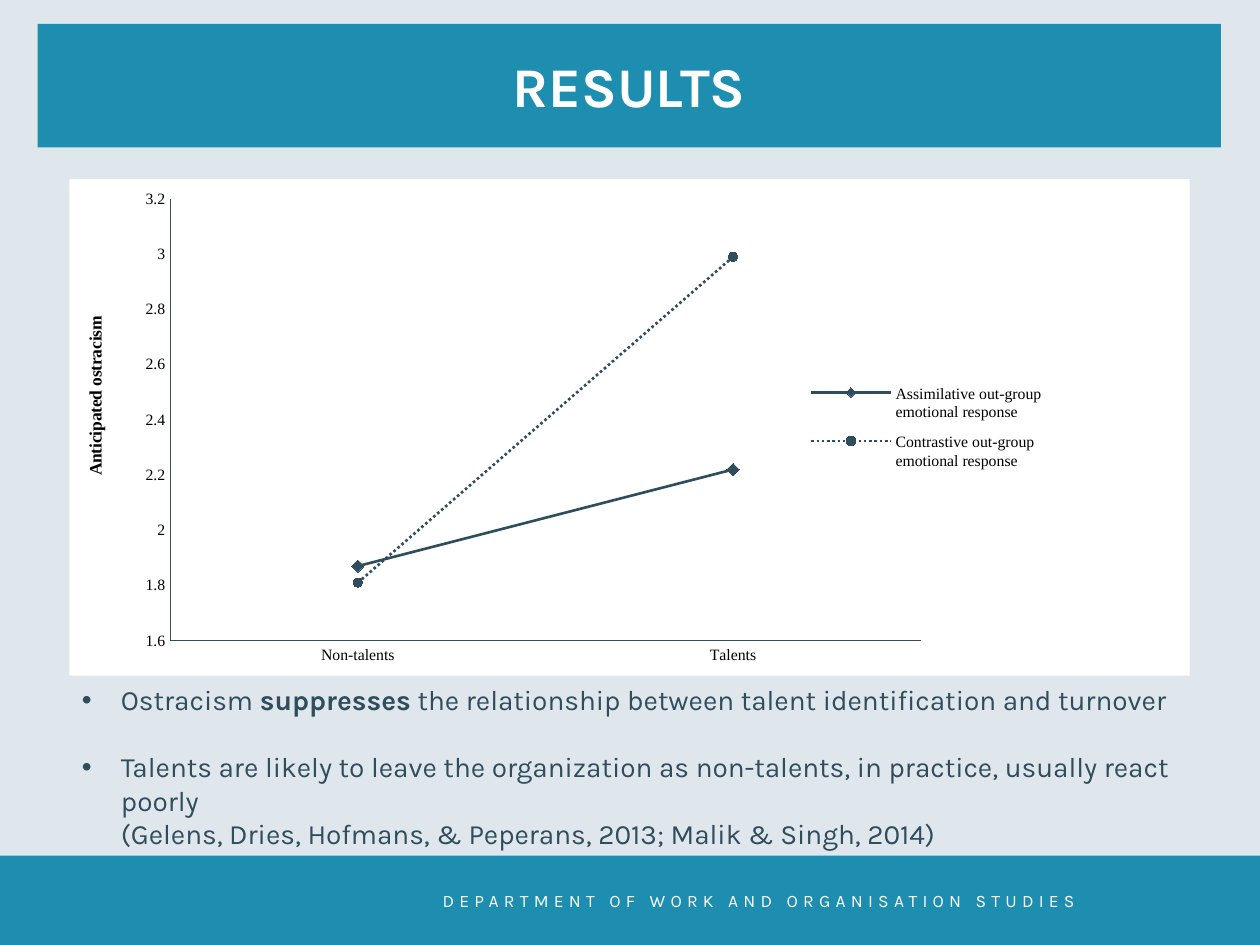
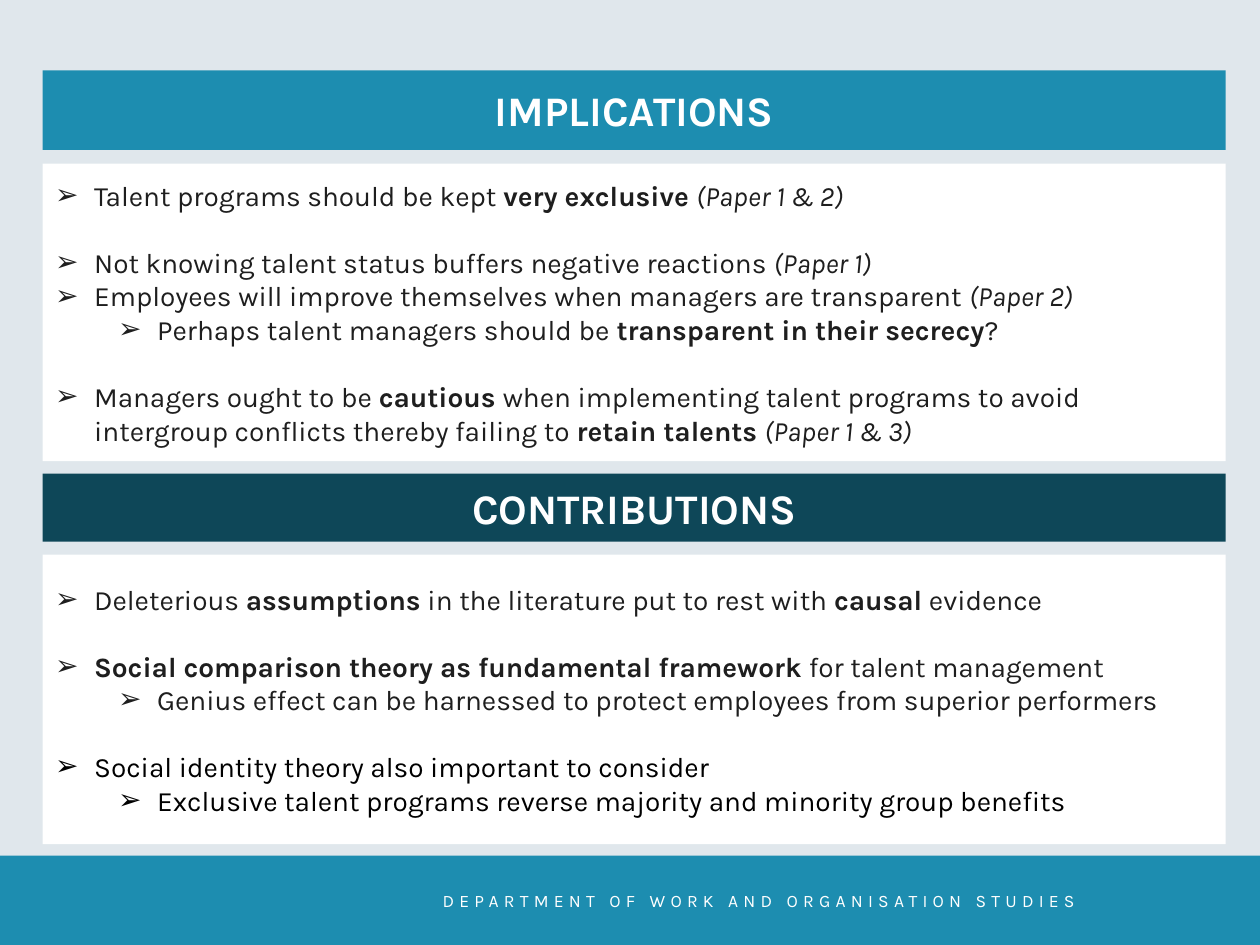
from lxml import etree
from pptx import Presentation
from pptx.chart.data import CategoryChartData
from pptx.dml.color import RGBColor
from pptx.enum.chart import XL_CHART_TYPE, XL_LEGEND_POSITION, XL_MARKER_STYLE, XL_TICK_MARK
from pptx.enum.dml import MSO_LINE
from pptx.enum.shapes import MSO_SHAPE
from pptx.enum.text import MSO_ANCHOR, MSO_AUTO_SIZE, PP_ALIGN
from pptx.oxml.ns import qn
from pptx.util import Cm, Pt

RECTANGLE = MSO_SHAPE.RECTANGLE
MIDDLE, TOP = MSO_ANCHOR.MIDDLE, MSO_ANCHOR.TOP
LEFT, CENTER, RIGHT = PP_ALIGN.LEFT, PP_ALIGN.CENTER, PP_ALIGN.RIGHT
DIAMOND, CIRCLE = XL_MARKER_STYLE.DIAMOND, XL_MARKER_STYLE.CIRCLE
SOLID, DOTTED = MSO_LINE.SOLID, MSO_LINE.ROUND_DOT

COLORS = {
    "background": "E0E7EC", "teal": "1D8DB0", "petrol": "0E4758", "white": "FFFFFF",
    "slate": "2F4D5D", "ink": "1E1E1E", "black": "000000",
}
FONT, CHART_FONT = "Karla", "Times New Roman"
BODY_SIZE, LINE_GAP = 16, 19.1
INDENT, LEVEL_STEP = 0.79, 1.27
BAND_WIDTH = 23.85
FOOTER_TOP, FOOTER_HEIGHT, FOOTER_RIGHT = 17.25, 1.8, 22.17

# Content: a bullet is (level, gap before, colour, runs), a run is (text, style)
FOOTER = "DEPARTMENT OF WORK AND ORGANISATION STUDIES"

CATEGORIES = ["Non-talents", "Talents"]
SERIES = [
    ("Assimilative out-group emotional response", (1.87, 2.22), SOLID, DIAMOND, 7),
    ("Contrastive out-group emotional response", (1.81, 2.99), DOTTED, CIRCLE, 5),
]
AXIS_TITLE = "Anticipated ostracism"

RESULTS = [
    (0, False, "slate", [
        ("Ostracism ", ""), ("suppresses", "b"),
        (" the relationship between talent identification and turnover", "")]),
    (0, True, "slate", [
        ("Talents are likely to leave the organization as non-talents, in practice, "
         "usually react poorly", ""),
        ("\n", ""),
        ("(Gelens, Dries, Hofmans, & Peperans, 2013; Malik & Singh, 2014)", "")]),
]
IMPLICATIONS = [
    (0, False, "ink", [
        ("Talent programs should be kept ", ""), ("very exclusive ", "b"),
        ("(Paper 1 & 2)", "i")]),
    (0, True, "ink", [
        ("Not knowing talent status buffers negative reactions ", ""), ("(Paper 1)", "i")]),
    (0, False, "ink", [
        ("Employees will improve themselves when managers are transparent ", ""),
        ("(Paper 2)", "i")]),
    (1, False, "ink", [
        ("Perhaps talent managers should be ", ""),
        ("transparent in their secrecy", "b"), ("?", "")]),
    (0, True, "ink", [
        ("Managers ought to be ", ""), ("cautious ", "b"),
        ("when implementing talent programs to avoid intergroup conflicts "
         "thereby failing to ", ""),
        ("retain talents ", "b"), ("(Paper 1 & 3)", "i")]),
]
CONTRIBUTIONS = [
    (0, False, "ink", [
        ("Deleterious ", ""), ("assumptions", "b"),
        (" in the literature put to rest with ", ""), ("causal", "b"), (" evidence", "")]),
    (0, True, "ink", [
        ("Social comparison theory as fundamental framework", "b"),
        (" for talent management", "")]),
    (1, False, "ink", [
        ("Genius effect can be harnessed to protect employees from superior performers", "")]),
    (0, True, "black", [("Social identity theory also important to consider", "")]),
    (1, False, "black", [
        ("Exclusive talent programs reverse majority and minority group benefits", "")]),
]


def rgb(name):
    return RGBColor.from_string(COLORS[name])


def style_font(font, size, color, bold=False, name=FONT):
    font.name, font.size, font.bold = name, Pt(size), bold
    font.color.rgb = rgb(color)


def place(shape, left, top, width, height):
    shape.left, shape.top, shape.width, shape.height = map(Cm, (left, top, width, height))


def add_box(slide, color, *box):
    shape = slide.shapes.add_shape(RECTANGLE, *map(Cm, box))
    shape.shadow.inherit = False
    shape.fill.solid()
    shape.fill.fore_color.rgb = rgb(color)
    shape.line.fill.background()
    return shape


def set_frame(shape, anchor):
    frame = shape.text_frame
    frame.word_wrap = True
    frame.auto_size = MSO_AUTO_SIZE.NONE
    frame.vertical_anchor = anchor
    return frame


def write_heading(shape, text, size):
    paragraph = set_frame(shape, MIDDLE).paragraphs[0]
    paragraph.text = text
    paragraph.alignment = CENTER
    style_font(paragraph.font, size, "white", bold=True)


def write_bullets(shape, bullets, mark, anchor):
    frame = set_frame(shape, anchor)
    for index, (level, gap, color, runs) in enumerate(bullets):
        paragraph = frame.add_paragraph() if index else frame.paragraphs[0]
        properties = paragraph._p.get_or_add_pPr()
        properties.set("marL", str(Cm(INDENT + level * LEVEL_STEP)))
        properties.set("indent", str(-Cm(INDENT)))
        etree.SubElement(properties, qn("a:buFont")).set("typeface", "Arial")
        etree.SubElement(properties, qn("a:buChar")).set("char", mark)
        paragraph.level = level
        paragraph.alignment = LEFT
        paragraph.space_before = Pt(LINE_GAP if gap else 0)
        style_font(paragraph.font, BODY_SIZE, color)
        for text, style in runs:
            if text == "\n":
                paragraph.add_line_break()
                continue
            run = paragraph.add_run()
            run.text = text
            if style == "b":
                run.font.bold = True
            elif style == "i":
                run.font.italic = True


def new_slide(presentation, title, title_size, title_box, footer_left):
    """Add a slide with its title band and the shared footer."""
    slide = presentation.slides.add_slide(presentation.slide_layouts[5])
    add_box(slide, "teal", 0, FOOTER_TOP, 25.4, FOOTER_HEIGHT)
    footer = slide.shapes.add_textbox(
        *map(Cm, (footer_left, FOOTER_TOP, FOOTER_RIGHT - footer_left, FOOTER_HEIGHT)))
    frame = set_frame(footer, MIDDLE)
    frame.margin_left = frame.margin_top = frame.margin_bottom = 0
    frame.margin_right = Cm(0.5)
    paragraph = frame.paragraphs[0]
    paragraph.alignment = RIGHT
    run = paragraph.add_run()
    run.text = FOOTER
    style_font(run.font, 10, "white")
    run._r.get_or_add_rPr().set("spc", "300")

    band = slide.shapes.title
    place(band, *title_box)
    band.fill.solid()
    band.fill.fore_color.rgb = rgb("teal")
    write_heading(band, title, title_size)
    return slide


def set_layout(element, index, inner=False, **fractions):
    """Give a chart part a fixed place, as fractions of the chart."""
    for old in element.findall(qn("c:layout")):
        element.remove(old)
    layout = etree.Element(qn("c:layout"))
    manual = etree.SubElement(layout, qn("c:manualLayout"))
    settings = [("layoutTarget", "inner")] if inner else []
    settings += [("xMode", "edge"), ("yMode", "edge"), *fractions.items()]
    for tag, value in settings:
        etree.SubElement(manual, qn("c:" + tag)).set("val", str(value))
    element.insert(index, layout)


def add_ostracism_chart(slide, *box):
    data = CategoryChartData()
    data.categories = CATEGORIES
    for name, values, *_ in SERIES:
        data.add_series(name, values)
    chart = slide.shapes.add_chart(XL_CHART_TYPE.LINE_MARKERS, *map(Cm, box), data).chart
    style_font(chart.font, 10, "slate", name="Roboto Condensed")
    chart.has_title = False

    # White chart area without a border
    area = etree.Element(qn("c:spPr"))
    fill = etree.SubElement(area, qn("a:solidFill"))
    etree.SubElement(fill, qn("a:srgbClr")).set("val", COLORS["white"])
    border = etree.SubElement(area, qn("a:ln"))
    etree.SubElement(border, qn("a:noFill"))
    chart._chartSpace.find(qn("c:chart")).addnext(area)

    # Lines and markers
    chart.plots[0].vary_by_categories = False
    for series, (_, _, dash, marker, size) in zip(chart.plots[0].series, SERIES):
        series.smooth = False
        series.format.line.color.rgb = rgb("slate")
        series.format.line.width = Pt(1.5)
        series.format.line.dash_style = dash
        series.marker.style, series.marker.size = marker, size
        series.marker.format.fill.solid()
        series.marker.format.fill.fore_color.rgb = rgb("slate")
        series.marker.format.line.color.rgb = rgb("slate")

    # Axes
    for axis in (chart.category_axis, chart.value_axis):
        axis.has_major_gridlines = False
        axis.major_tick_mark = axis.minor_tick_mark = XL_TICK_MARK.NONE
        axis.format.line.color.rgb = rgb("slate")
        axis.format.line.width = Pt(0.75)
        style_font(axis.tick_labels.font, 9, "black", name=CHART_FONT)
    value_axis = chart.value_axis
    value_axis.minimum_scale, value_axis.maximum_scale = 1.6, 3.2
    value_axis.major_unit = 0.2
    title_frame = value_axis.axis_title.text_frame
    title_frame.text = AXIS_TITLE
    style_font(title_frame.paragraphs[0].font, 10, "black", bold=True, name=CHART_FONT)
    title_frame._txBody.bodyPr.set("rot", "-5400000")
    title_frame._txBody.bodyPr.set("vert", "horz")

    # Legend and places
    chart.has_legend = True
    legend = chart.legend
    legend.position = XL_LEGEND_POSITION.RIGHT
    legend.include_in_layout = False
    style_font(legend.font, 9, "black", name=CHART_FONT)
    plot_area = chart._chartSpace.find(".//" + qn("c:plotArea"))
    set_layout(plot_area, 0, inner=True, x=0.09, y=0.04, w=0.67, h=0.89)
    set_layout(legend._element, 1, x=0.65, y=0.39, w=0.23, h=0.22)
    set_layout(value_axis.axis_title._element, 1, x=0.01, y=0.27)


def main():
    presentation = Presentation()
    presentation.slide_width, presentation.slide_height = Cm(25.4), Cm(19.05)
    background = presentation.slide_master.background.fill
    background.solid()
    background.fore_color.rgb = rgb("background")

    # Results
    slide = new_slide(presentation, "RESULTS", 32, (0.76, 0.48, BAND_WIDTH, 2.49), 4.85)
    add_ostracism_chart(slide, 1.4, 3.61, 22.58, 10.01)
    findings = slide.shapes.add_textbox(*map(Cm, (1.4, 13.64, 23.67, 3)))
    write_bullets(findings, RESULTS, "•", TOP)

    # Implications and contributions
    left = 0.86
    slide = new_slide(presentation, "IMPLICATIONS", 24, (left, 1.42, BAND_WIDTH, 1.6), 5.89)
    heading = add_box(slide, "petrol", left, 9.55, BAND_WIDTH, 1.37)
    write_heading(heading, "CONTRIBUTIONS", 24)
    for bullets, top, height in ((IMPLICATIONS, 3.3, 6), (CONTRIBUTIONS, 11.18, 5.84)):
        panel = add_box(slide, "white", left, top, BAND_WIDTH, height)
        write_bullets(panel, bullets, "➢", MIDDLE)

    presentation.save("out.pptx")


if __name__ == "__main__":
    main()
